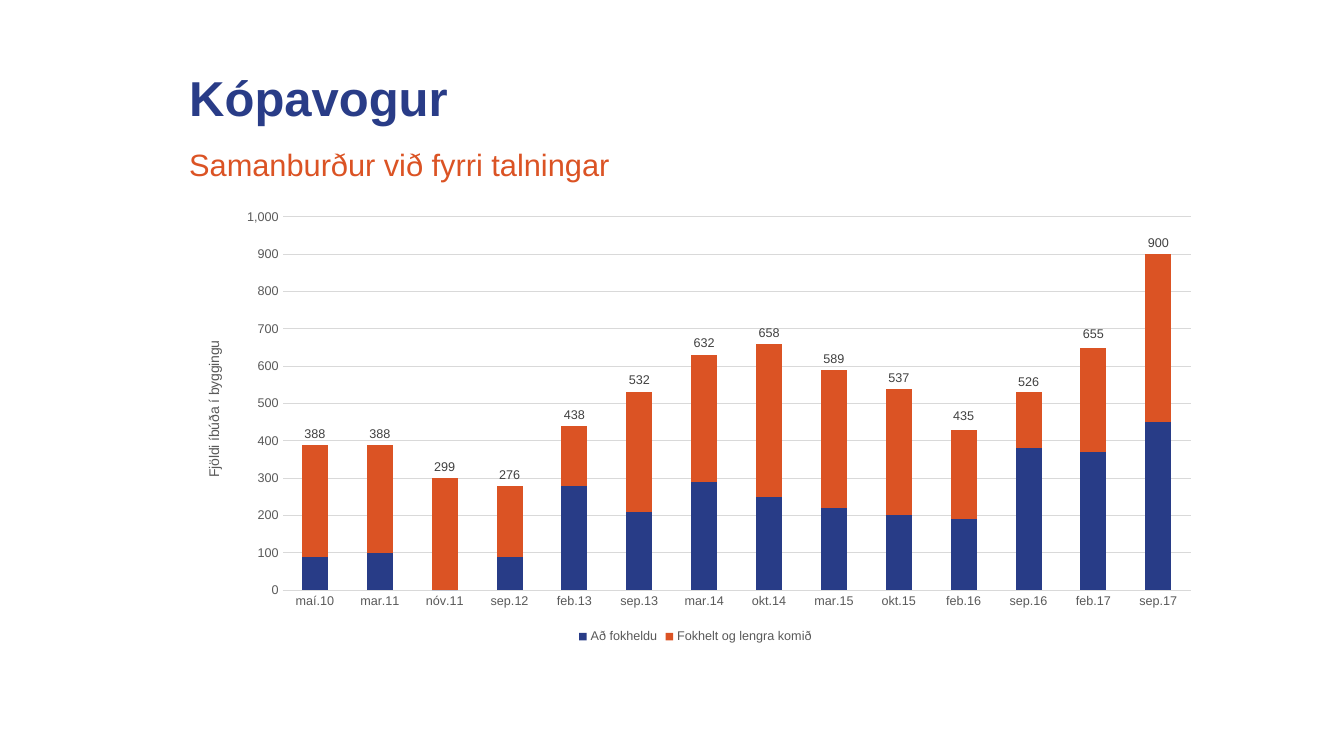
from lxml.etree import SubElement, QName
from pptx import Presentation
from pptx.chart.data import CategoryChartData
from pptx.dml.color import RGBColor
from pptx.enum.chart import (
    XL_CHART_TYPE as ChartType,
    XL_LABEL_POSITION as LabelPosition,
    XL_LEGEND_POSITION as LegendPosition,
    XL_MARKER_STYLE as MarkerStyle,
    XL_TICK_MARK as TickMark,
)
from pptx.enum.text import MSO_ANCHOR as Anchor
from pptx.oxml import parse_xml
from pptx.util import Cm, Pt

COLORS = {
    "title": "293C87",
    "begun": "283C87",
    "orange": "DB5324",
    "axis": "595959",
    "label": "404040",
    "grid": "D9D9D9",
}
FONT = "Arial"
LEFT, WIDTH = 4.52, 26.01
HEADINGS = [
    {"text": "Kópavogur", "top": 1.52, "height": 1.8, "anchor": Anchor.BOTTOM,
     "font": {"size": 35, "bold": True, "color": "title"}},
    {"text": "Samanburður við fyrri talningar", "top": 3.66, "height": 0.99, "anchor": Anchor.TOP,
     "font": {"size": 22, "bold": False, "color": "orange"}},
]
CHART_TOP, CHART_HEIGHT = 5.13, 11.2
AXIS_TITLE = "Fjöldi íbúða í byggingu"
PLOT_LAYOUT = {"x": 0.1, "y": 0.03, "w": 0.88, "h": 0.84}
MONTHS = ["maí.10", "mar.11", "nóv.11", "sep.12", "feb.13", "sep.13", "mar.14",
          "okt.14", "mar.15", "okt.15", "feb.16", "sep.16", "feb.17", "sep.17"]
SERIES = {
    "Að fokheldu": [90, 100, 0, 90, 280, 210, 290, 250, 220, 200, 190, 380, 370, 450],
    "Fokhelt og lengra komið": [300, 290, 300, 190, 160, 320, 340, 410, 370, 340, 240, 150, 280, 450],
    "Samtals": [388, 388, 299, 276, 438, 532, 632, 658, 589, 537, 435, 526, 655, 900],
}
BAR_COLORS = ["begun", "orange"]
CHART_NS = "http://schemas.openxmlformats.org/drawingml/2006/chart"


def rgb(name):
    return RGBColor.from_string(COLORS[name])


def tag(name):
    return QName(CHART_NS, name)


def set_font(font, size, color, bold=False):
    for attribute, value in {"name": FONT, "size": Pt(size), "bold": bold}.items():
        setattr(font, attribute, value)
    font.color.rgb = rgb(color)


def add_heading(slide, heading):
    shape = slide.shapes.add_textbox(Cm(LEFT), Cm(heading["top"]), Cm(WIDTH), Cm(heading["height"]))
    frame = shape.text_frame
    frame.word_wrap = True
    frame.vertical_anchor = heading["anchor"]
    paragraph = frame.paragraphs[0]
    paragraph.line_spacing = 0.9
    run = paragraph.add_run()
    run.text = heading["text"]
    set_font(run.font, **heading["font"])


def move_totals_to_line(chart):
    """Turn the last column series into a line plot on the same axes."""
    bar_plot = chart.plots[0]._element
    totals = bar_plot.findall(tag("ser"))[-1]
    for column_setting in totals.findall(tag("invertIfNegative")):
        totals.remove(column_setting)
    line_plot = parse_xml(
        f'<c:lineChart xmlns:c="{CHART_NS}"><c:grouping val="standard"/>'
        '<c:varyColors val="0"/><c:marker val="1"/></c:lineChart>')
    line_plot.insert(2, totals)
    for axis_id in bar_plot.findall(tag("axId")):
        SubElement(line_plot, tag("axId"), val=axis_id.get("val"))
    bar_plot.addnext(line_plot)


def set_plot_layout(chart):
    plot_area = chart._chartSpace.chart.plotArea
    for old in plot_area.findall(tag("layout")):
        plot_area.remove(old)
    layout = parse_xml(f'<c:layout xmlns:c="{CHART_NS}"/>')
    manual = SubElement(layout, tag("manualLayout"))
    settings = {"layoutTarget": "inner", "xMode": "edge", "yMode": "edge", **PLOT_LAYOUT}
    for name, value in settings.items():
        SubElement(manual, tag(name), val=str(value))
    plot_area.insert(0, layout)


def format_axes(chart):
    months, counts = chart.category_axis, chart.value_axis
    for axis in (months, counts):
        axis.major_tick_mark = axis.minor_tick_mark = TickMark.NONE
        set_font(axis.tick_labels.font, 9, "axis")
    counts.minimum_scale, counts.maximum_scale, counts.major_unit = 0, 1000, 100
    counts.tick_labels.number_format = "#,##0"
    counts.tick_labels.number_format_is_linked = False
    counts.format.line.fill.background()
    for line in (months.format.line, counts.major_gridlines.format.line):
        line.color.rgb = rgb("grid")
        line.width = Pt(0.75)
    paragraph = counts.axis_title.text_frame.paragraphs[0]
    run = paragraph.add_run()
    run.text = AXIS_TITLE
    set_font(run.font, 10, "axis")


def format_legend(chart):
    chart.has_legend = True
    legend = chart.legend
    legend.position = LegendPosition.BOTTOM
    legend.include_in_layout = False
    set_font(legend.font, 9, "axis")
    hidden = parse_xml(
        f'<c:legendEntry xmlns:c="{CHART_NS}"><c:idx val="{len(SERIES) - 1}"/>'
        '<c:delete val="1"/></c:legendEntry>')
    legend._element.insert(1, hidden)


def add_chart(slide):
    data = CategoryChartData(number_format="#,##0")
    data.categories = MONTHS
    for name, values in SERIES.items():
        data.add_series(name, values)
    chart = slide.shapes.add_chart(
        ChartType.COLUMN_STACKED, Cm(LEFT), Cm(CHART_TOP), Cm(WIDTH), Cm(CHART_HEIGHT), data).chart
    chart.has_title = False
    chart.font.name, chart.font.size = FONT, Pt(10)
    move_totals_to_line(chart)
    set_plot_layout(chart)
    format_axes(chart)
    format_legend(chart)

    columns, line = chart.plots
    columns.gap_width, columns.overlap = 150, 100
    columns.vary_by_categories = False
    for series, color in zip(columns.series, BAR_COLORS):
        series.format.fill.solid()
        series.format.fill.fore_color.rgb = rgb(color)

    totals = line.series[0]
    totals.smooth = False
    totals.format.line.fill.background()
    totals.marker.style = MarkerStyle.NONE
    labels = totals.data_labels
    label_format = {"show_value": True, "position": LabelPosition.ABOVE,
                    "number_format": "#,##0", "number_format_is_linked": False}
    for attribute, value in label_format.items():
        setattr(labels, attribute, value)
    set_font(labels.font, 9, "label")


def main():
    presentation = Presentation()
    presentation.slide_width, presentation.slide_height = Cm(33.87), Cm(19.05)
    slide = presentation.slides.add_slide(presentation.slide_layouts[6])
    for heading in HEADINGS:
        add_heading(slide, heading)
    add_chart(slide)
    presentation.save("out.pptx")


if __name__ == "__main__":
    main()
